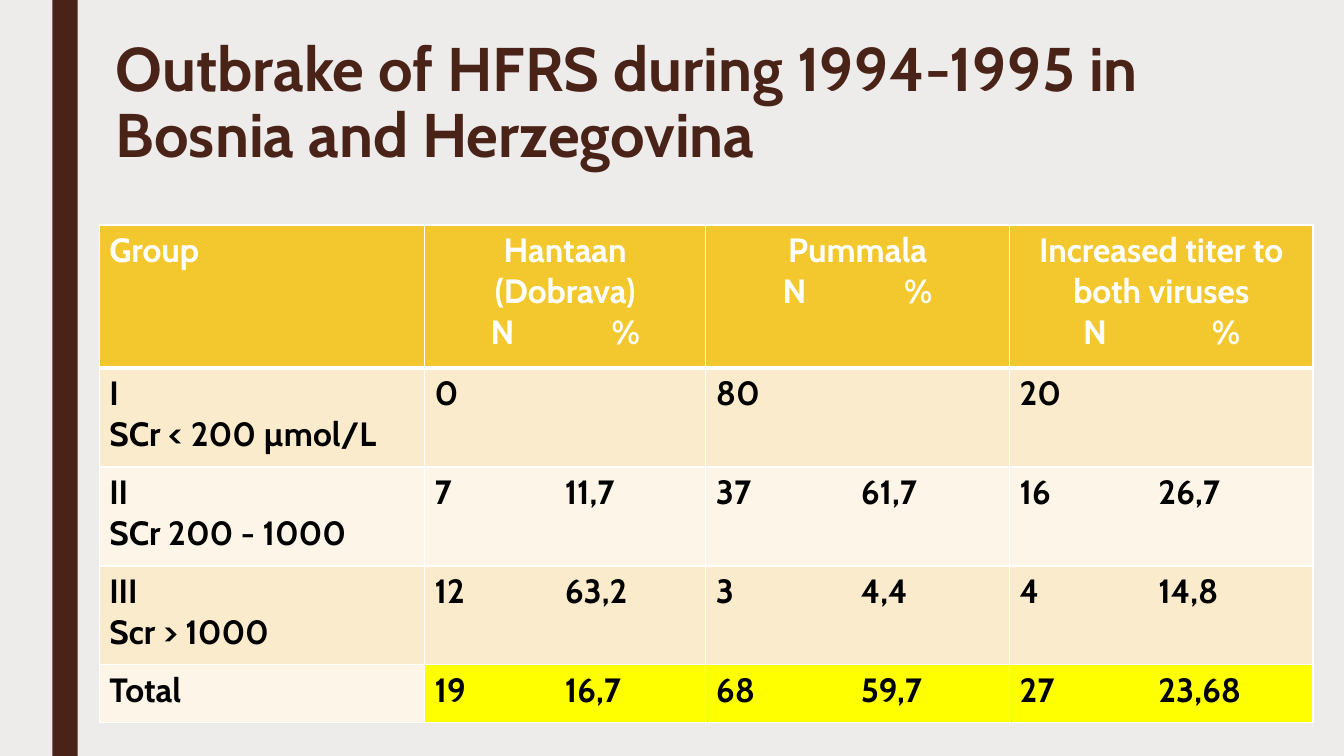
from lxml.etree import SubElement
from pptx import Presentation
from pptx.dml.color import RGBColor
from pptx.enum.shapes import MSO_SHAPE as Shape
from pptx.enum.text import MSO_ANCHOR as Anchor, PP_ALIGN as Align
from pptx.oxml.ns import qn
from pptx.util import Cm, Pt

TITLE = "Outbrake of HFRS during 1994-1995 in Bosnia and Herzegovina"
HEADER = [
    "Group",
    "Hantaan\n(Dobrava)\n\tN\t%",
    "Pummala\n\tN\t%",
    "Increased titer to both viruses\n\tN\t%",
]
GROUPS = [
    ["I\nSCr < 200 µmol/L", "0", "80", "20"],
    ["II\nSCr 200 - 1000", "7\t11,7", "37\t61,7", "16\t26,7"],
    ["III\nScr > 1000", "12\t63,2", "3\t4,4", "4\t14,8"],
    ["Total", "19\t16,7", "68\t59,7", "27\t23,68"],
]
COLORS = {
    "background": "EDECEB",
    "brown": "4A2318",
    "header": "F3C82E",
    "odd": "FAEBCD",
    "even": "FDF5E8",
    "total": "FFFF00",
    "white": "FFFFFF",
    "black": "000000",
}
FONT = "Cabin"
COLUMN_WIDTHS = [8.2, 7.09, 7.65, 7.65]
ROW_HEIGHTS = [3.61, 2.49, 2.49, 2.49, 1.45]
HEADER_STOPS = [[], [1.41, 4.46], [1.68, 4.74], [1.6, 4.85]]
BODY_STOPS = [[], [3.28], [3.65], [3.5]]


def color(name):
    return RGBColor.from_string(COLORS[name])


def fill(part, name):
    part.fill.solid()
    part.fill.fore_color.rgb = color(name)


def style(paragraph, size, name):
    for run in paragraph.runs:
        run.font.name = FONT
        run.font.size = Pt(size)
        run.font.bold = True
        run.font.color.rgb = color(name)


def add_stops(paragraph, stops):
    tab_list = SubElement(paragraph._p.get_or_add_pPr(), qn("a:tabLst"))
    for stop in stops:
        SubElement(tab_list, qn("a:tab"), pos=str(Cm(stop)), algn="l")


def add_borders(cell, bottom):
    properties = cell._tc.get_or_add_tcPr()
    for side, width in (("L", 1), ("R", 1), ("T", 1), ("B", bottom)):
        line = SubElement(properties, qn(f"a:ln{side}"), w=str(Pt(width)))
        solid = SubElement(line, qn("a:solidFill"))
        SubElement(solid, qn("a:srgbClr"), val=COLORS["white"])


def fill_name(row, column):
    if row == 0:
        return "header"
    if row == len(GROUPS) and column > 0:
        return "total"
    return "odd" if row % 2 else "even"


def write_cell(cell, text, row, column):
    add_borders(cell, 3 if row == 0 else 1)
    fill(cell, fill_name(row, column))
    cell.text_frame.text = text
    for paragraph in cell.text_frame.paragraphs:
        if "\t" in paragraph.text:
            add_stops(paragraph, (BODY_STOPS if row else HEADER_STOPS)[column])
        elif row == 0 and column > 0:
            paragraph.alignment = Align.CENTER
        style(paragraph, 24, "black" if row else "white")


def main():
    deck = Presentation()
    deck.slide_width, deck.slide_height = Cm(33.87), Cm(19.05)
    slide = deck.slides.add_slide(deck.slide_layouts[6])
    fill(slide.background, "background")

    stripe = slide.shapes.add_shape(Shape.RECTANGLE, Cm(1.32), 0, Cm(0.64), deck.slide_height)
    stripe.shadow.inherit = False
    fill(stripe, "brown")
    stripe.line.fill.background()

    title = slide.shapes.add_textbox(Cm(2.67), Cm(0.81), Cm(30.61), Cm(3.68)).text_frame
    title.word_wrap = True
    title.vertical_anchor = Anchor.MIDDLE
    title.text = TITLE
    title.paragraphs[0].line_spacing = 0.89
    style(title.paragraphs[0], 44, "brown")

    table = slide.shapes.add_table(
        len(ROW_HEIGHTS), len(COLUMN_WIDTHS), Cm(2.5), Cm(5.67),
        Cm(sum(COLUMN_WIDTHS)), Cm(sum(ROW_HEIGHTS))).table
    for column, width in zip(table.columns, COLUMN_WIDTHS):
        column.width = Cm(width)
    for row, height in zip(table.rows, ROW_HEIGHTS):
        row.height = Cm(height)
    for row, texts in enumerate([HEADER] + GROUPS):
        for column, text in enumerate(texts):
            write_cell(table.cell(row, column), text, row, column)

    deck.save("out.pptx")


if __name__ == "__main__":
    main()
